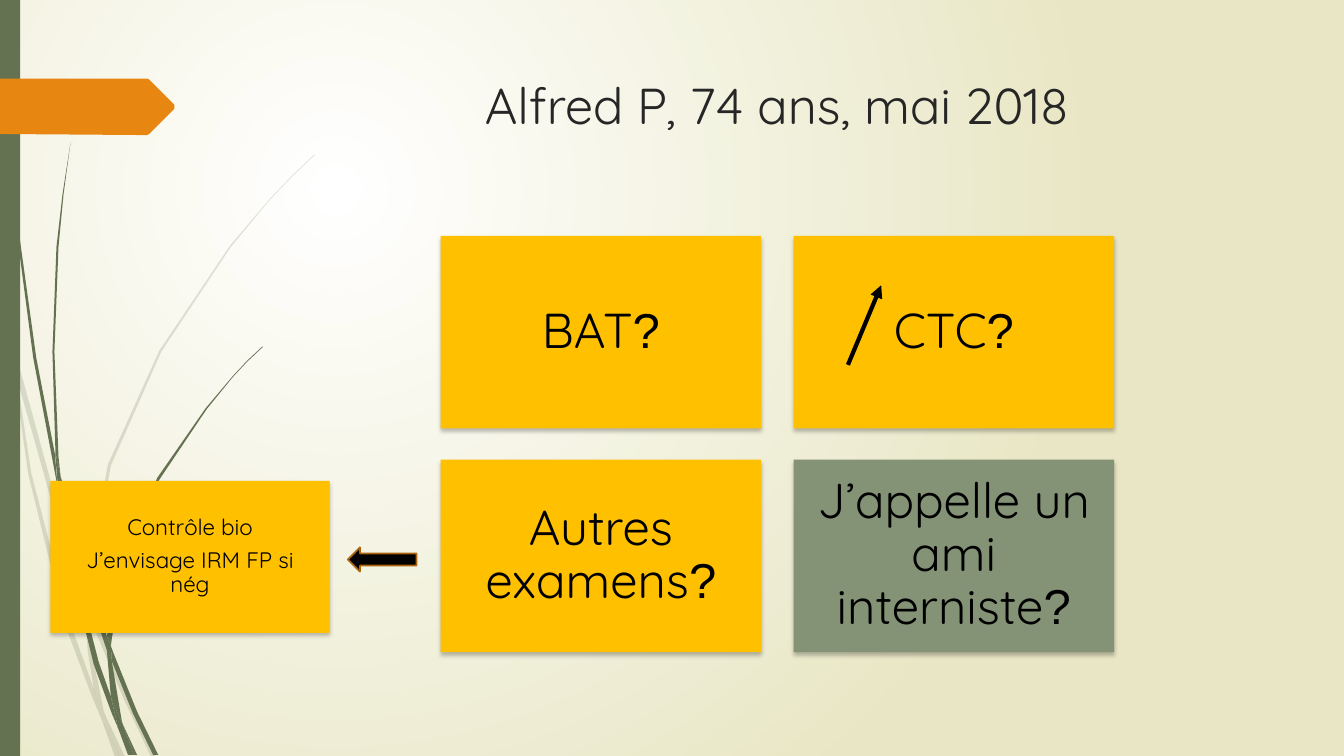
from dataclasses import dataclass

from pptx import Presentation
from pptx.dml.color import RGBColor
from pptx.enum.shapes import MSO_CONNECTOR as Connector, MSO_SHAPE as Preset
from pptx.enum.text import MSO_ANCHOR as Anchor, PP_ALIGN as Align
from pptx.oxml import parse_xml
from pptx.oxml.ns import nsdecls
from pptx.util import Pt


@dataclass(frozen=True)
class Theme:
    glow: str = "FFFFFF"
    sand: str = "E8E6C4"
    moss: str = "647252"
    sage: str = "849276"
    amber: str = "FFC000"
    orange: str = "E78712"
    rust: str = "AB640D"
    ink: str = "000000"
    title_ink: str = "262626"
    font: str = "Quicksand"
    mark_font: str = "Arial"
    title_size: int = 36
    card_size: int = 35
    note_size: int = 16


THEME = Theme()
PX = 9144
SLIDE = (1333, 750)

TITLE = "Alfred P, 74 ans, mai 2018"
QUESTIONS = [
    ("BAT", THEME.amber),
    ("CTC", THEME.amber),
    ("Autres examens", THEME.amber),
    ("J’appelle un ami interniste", THEME.sage),
]
FOLLOW_UP = ["Contrôle bio", "J’envisage IRM FP si nég"]

TITLE_BOX = (283, 69, 975, 140)
SIDE_STRIP = (0, 0, 20, 750)
GRID_LEFT, GRID_TOP, GRID_COLUMNS = 437, 234, 2
CARD_WIDTH, CARD_HEIGHT = 318, 191
COLUMN_GAP, ROW_GAP = 32, 31
FOLLOW_UP_BOX = (50, 477, 277, 151)
BLOCK_ARROW = (345, 543, 68, 24)
RISE_START, RISE_END = (841, 362), (874, 283)

BANNER = [(0, 78), (146, 78), (148, 79), (173, 104), (173, 108), (148, 133),
          (146, 134), (136, 134), (0, 133)]
FADED_BLADES = [
    [(11, 350), (9, 322), (0, 282), (0, 299), (10, 344)],
    [(58, 522), (84, 599), (85, 586), (62, 520), (14, 345), (17, 376)],
    [(92, 607), (88, 596), (88, 610), (123, 694), (150, 751), (155, 751), (127, 692)],
    [(119, 751), (124, 751), (105, 711)],
    [(93, 683), (70, 619), (31, 469), (17, 376), (11, 350), (28, 470), (65, 621),
     (92, 693), (101, 714), (99, 707)],
    [(84, 599), (87, 646), (93, 683), (96, 692), (105, 711), (103, 706), (91, 646),
     (88, 610), (88, 608)],
    [(88, 584), (110, 462), (160, 349), (229, 245), (268, 198), (290, 175), (312, 154),
     (312, 153), (289, 175), (268, 197), (228, 244), (158, 348), (107, 461), (85, 584),
     (85, 586), (88, 596)],
    [(101, 714), (114, 751), (119, 751)],
    [(96, 692), (93, 683), (99, 707), (101, 714), (119, 751), (105, 711)],
]
DARK_BLADES = [
    [(7, 110), (17, 233), (33, 355), (56, 477), (57, 481), (55, 457), (55, 453),
     (36, 355), (19, 232), (8, 109), (5, 48), (4, 0), (3, 0), (4, 48)],
    [(88, 592), (106, 645), (106, 633), (106, 631), (93, 590), (60, 472), (64, 505)],
    [(113, 649), (110, 641), (111, 656), (132, 708), (152, 749), (157, 749), (136, 706)],
    [(110, 691), (98, 657), (72, 556), (64, 505), (57, 477), (68, 557), (93, 659),
     (111, 708), (117, 722), (116, 717)],
    [(60, 472), (58, 453), (54, 349), (58, 245), (63, 193), (70, 141), (62, 193),
     (56, 245), (52, 349), (55, 449)],
    [(133, 749), (136, 749), (122, 719)],
    [(57, 477), (64, 505), (60, 472), (55, 449), (55, 453)],
    [(111, 633), (125, 552), (158, 476), (205, 406), (231, 374), (245, 359), (261, 344),
     (260, 344), (245, 358), (231, 373), (204, 405), (156, 474), (122, 551), (106, 631),
     (110, 641)],
    [(117, 722), (127, 749), (131, 749)],
    [(106, 645), (110, 691), (116, 706), (122, 719), (121, 716), (111, 656), (109, 651)],
    [(106, 645), (109, 651), (111, 656), (110, 641), (106, 631), (106, 633)],
    [(116, 706), (110, 691), (116, 717), (117, 722), (130, 749), (133, 749), (122, 719)],
]


def emu(*lengths):
    return [length * PX for length in lengths]


def rgb(colour):
    return RGBColor.from_string(colour)


def write_text(frame, paragraphs, *, size, colour=THEME.ink, anchor=Anchor.MIDDLE,
               inset=(15, 15), line_spacing=0.9, space_ratio=0.35):
    frame.word_wrap = True
    frame.vertical_anchor = anchor
    frame.margin_left = frame.margin_right = inset[0] * PX
    frame.margin_top = frame.margin_bottom = inset[1] * PX
    for index, runs in enumerate(paragraphs):
        paragraph = frame.add_paragraph() if index else frame.paragraphs[0]
        paragraph.alignment = Align.CENTER
        paragraph.line_spacing = line_spacing
        paragraph.space_after = Pt(round(size * space_ratio))
        for wording, font in runs:
            run = paragraph.add_run()
            run.text = wording
            run.font.name = font
            run.font.size = Pt(size)
            run.font.color.rgb = rgb(colour)


def paint(shape, fill):
    shape.shadow.inherit = False
    shape.fill.solid()
    shape.fill.fore_color.rgb = rgb(fill)
    shape.line.fill.background()
    return shape


def add_block(slide, preset, box, fill):
    return paint(slide.shapes.add_shape(preset, *emu(*box)), fill)


def add_card(slide, box, fill, paragraphs, size):
    card = add_block(slide, Preset.RECTANGLE, box, fill)
    effects = card._element.spPr.find("{*}effectLst")
    effects.append(parse_xml(
        f'<a:outerShdw {nsdecls("a")} blurRad="{Pt(3)}" dist="{Pt(2)}" dir="5400000" '
        f'rotWithShape="0"><a:srgbClr val="{THEME.ink}"><a:alpha val="25000"/>'
        '</a:srgbClr></a:outerShdw>'))
    write_text(card.text_frame, paragraphs, size=size)


def add_outline(slide, points, fill, alpha=100):
    builder = slide.shapes.build_freeform(*points[0], scale=PX)
    builder.add_line_segments(points[1:], close=True)
    outline = paint(builder.convert_to_shape(), fill)
    if alpha < 100:
        colour = outline._element.spPr.find("{*}solidFill")[0]
        colour.append(parse_xml(f'<a:alpha {nsdecls("a")} val="{alpha * 1000}"/>'))


def add_background(slide):
    slide._element.cSld.insert(0, parse_xml(
        f'<p:bg {nsdecls("p", "a")}><p:bgPr><a:gradFill rotWithShape="1"><a:gsLst>'
        f'<a:gs pos="0"><a:srgbClr val="{THEME.glow}"/></a:gs>'
        f'<a:gs pos="100000"><a:srgbClr val="{THEME.sand}"/></a:gs></a:gsLst>'
        '<a:path path="circle"><a:fillToRect l="50000" t="50000" r="100000" b="100000"/>'
        '</a:path></a:gradFill><a:effectLst/></p:bgPr></p:bg>'))


def add_rising_arrow(slide):
    arrow = slide.shapes.add_connector(
        Connector.STRAIGHT, *emu(*RISE_START, *RISE_END))
    arrow.line.color.rgb = rgb(THEME.ink)
    arrow.line.width = Pt(3)
    arrow.line._get_or_add_ln().append(
        parse_xml(f'<a:tailEnd {nsdecls("a")} type="triangle"/>'))
    arrow._element.spPr.append(parse_xml(f'<a:effectLst {nsdecls("a")}/>'))


def main():
    deck = Presentation()
    deck.slide_width, deck.slide_height = emu(*SLIDE)
    slide = deck.slides.add_slide(deck.slide_layouts[6])
    add_background(slide)

    for blades, alpha in ((FADED_BLADES, 20), (DARK_BLADES, 100)):
        for points in blades:
            add_outline(slide, points, THEME.moss, alpha)
    add_block(slide, Preset.RECTANGLE, SIDE_STRIP, THEME.moss)
    add_outline(slide, BANNER, THEME.orange)

    title = slide.shapes.add_textbox(*emu(*TITLE_BOX))
    write_text(title.text_frame, [[(TITLE, THEME.font)]], size=THEME.title_size,
               colour=THEME.title_ink, anchor=Anchor.TOP, inset=(10, 5),
               line_spacing=1.0, space_ratio=0)

    for index, (question, fill) in enumerate(QUESTIONS):
        row, column = divmod(index, GRID_COLUMNS)
        box = (GRID_LEFT + column * (CARD_WIDTH + COLUMN_GAP),
               GRID_TOP + row * (CARD_HEIGHT + ROW_GAP), CARD_WIDTH, CARD_HEIGHT)
        runs = [(question, THEME.font), ("?", THEME.mark_font)]
        add_card(slide, box, fill, [runs], THEME.card_size)
    add_rising_arrow(slide)

    add_card(slide, FOLLOW_UP_BOX, THEME.amber,
             [[(step, THEME.font)] for step in FOLLOW_UP], THEME.note_size)
    pointer = add_block(slide, Preset.RIGHT_ARROW, BLOCK_ARROW, THEME.ink)
    pointer.rotation = 180
    pointer.line.color.rgb = rgb(THEME.rust)
    pointer.line.width = Pt(1.25)

    deck.save("out.pptx")


if __name__ == "__main__":
    main()
